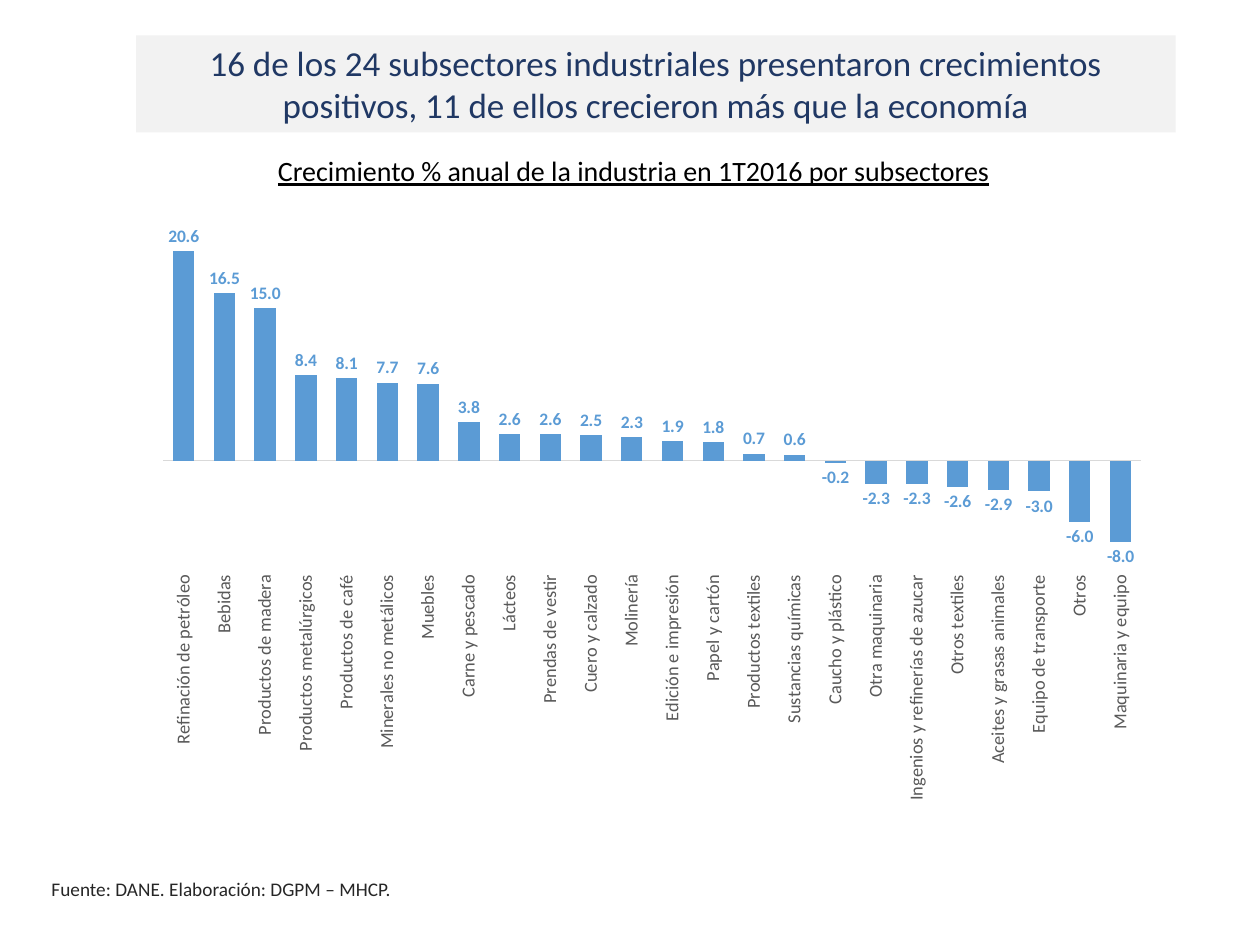
from lxml.etree import SubElement
from pptx import Presentation
from pptx.chart.data import CategoryChartData
from pptx.dml.color import RGBColor
from pptx.enum.chart import XL_CHART_TYPE, XL_LABEL_POSITION, XL_TICK_LABEL_POSITION, XL_TICK_MARK
from pptx.enum.text import MSO_ANCHOR, MSO_AUTO_SIZE, PP_ALIGN
from pptx.oxml.ns import qn
from pptx.util import Inches, Pt

FONT = "Calibri"
COLORS = {
    "banner": "F2F2F2",
    "title": "203864",
    "subtitle": "000000",
    "source": "262626",
    "bar": "5B9BD5",
    "axis_text": "595959",
    "axis_line": "D9D9D9",
}
GROWTH = {
    "Refinación de petróleo": 20.6,
    "Bebidas": 16.5,
    "Productos de madera": 15,
    "Productos metalúrgicos": 8.4,
    "Productos de café": 8.1,
    "Minerales no metálicos": 7.7,
    "Muebles": 7.6,
    "Carne y pescado": 3.8,
    "Lácteos": 2.6,
    "Prendas de vestir": 2.6,
    "Cuero y calzado": 2.5,
    "Molinería": 2.3,
    "Edición e impresión": 1.9,
    "Papel y cartón": 1.8,
    "Productos textiles": 0.7,
    "Sustancias químicas": 0.6,
    "Caucho y plástico": -0.2,
    "Otra maquinaria": -2.3,
    "Ingenios y refinerías de azucar": -2.3,
    "Otros textiles": -2.6,
    "Aceites y grasas animales": -2.9,
    "Equipo de transporte": -3,
    "Otros": -6,
    "Maquinaria y equipo": -8,
}


def color(name):
    return RGBColor.from_string(COLORS[name])


def style_font(font, size, color_name, bold=False):
    font.name = FONT
    font.size = Pt(size)
    font.bold = bold
    font.color.rgb = color(color_name)


def write_text(shape, text, size, color_name, alignment):
    frame = shape.text_frame
    frame.word_wrap = True
    frame.auto_size = MSO_AUTO_SIZE.NONE
    paragraph = frame.paragraphs[0]
    paragraph.alignment = alignment
    run = paragraph.add_run()
    run.text = text
    style_font(run.font, size, color_name)
    return run


def place_title(slide, left, top, width, height):
    title = slide.shapes.title
    title.left, title.top, title.width, title.height = left, top, width, height
    title.fill.solid()
    title.fill.fore_color.rgb = color("banner")
    title.text_frame.vertical_anchor = MSO_ANCHOR.MIDDLE
    write_text(
        title,
        "16 de los 24 subsectores industriales presentaron crecimientos "
        "positivos, 11 de ellos crecieron más que la economía",
        20, "title", PP_ALIGN.CENTER,
    )


def place_subtitle(slide, left, top, width, height):
    box = slide.shapes.add_textbox(left, top, width, height)
    run = write_text(
        box, "Crecimiento % anual de la industria en 1T2016 por subsectores",
        16, "subtitle", PP_ALIGN.CENTER,
    )
    run.font.underline = True


def place_source(slide, left, top, width, height):
    box = slide.shapes.add_textbox(left, top, width, height)
    write_text(box, "Fuente: DANE. Elaboración: DGPM – MHCP.", 11, "source", PP_ALIGN.LEFT)


def set_plot_layout(chart, x, y, w, h):
    plot_area = chart.plots[0]._element.getparent()
    layout = plot_area.find(qn("c:layout"))
    if layout is None:
        layout = SubElement(plot_area, qn("c:layout"))
        plot_area.insert(0, layout)
    manual = SubElement(layout, qn("c:manualLayout"))
    settings = {"layoutTarget": "inner", "xMode": "edge", "yMode": "edge",
                "x": x, "y": y, "w": w, "h": h}
    for tag, value in settings.items():
        SubElement(manual, qn(f"c:{tag}")).set("val", str(value))


def place_growth_chart(slide, left, top, width, height):
    data = CategoryChartData()
    data.categories = list(GROWTH)
    data.add_series("Series 1", list(GROWTH.values()))
    chart = slide.shapes.add_chart(
        XL_CHART_TYPE.COLUMN_CLUSTERED, left, top, width, height, data
    ).chart
    chart.has_legend = False
    chart.has_title = False
    style_font(chart.font, 10, "subtitle")
    set_plot_layout(chart, 0.038, 0, 0.962, 0.536)

    # Columns and their values
    plot = chart.plots[0]
    plot.gap_width = 90
    plot.overlap = -27
    plot.vary_by_categories = False
    series = plot.series[0]
    series.invert_if_negative = False
    series.format.fill.solid()
    series.format.fill.fore_color.rgb = color("bar")
    labels = series.data_labels
    labels.show_value = True
    labels.number_format = "#,##0.0"
    labels.number_format_is_linked = False
    labels.position = XL_LABEL_POSITION.OUTSIDE_END
    style_font(labels.font, 10, "bar", bold=True)

    # Value axis
    value_axis = chart.value_axis
    value_axis.minimum_scale = -10
    value_axis.maximum_scale = 25
    value_axis.has_major_gridlines = False
    value_axis.visible = False

    # Category axis with vertical names
    category_axis = chart.category_axis
    category_axis.tick_label_position = XL_TICK_LABEL_POSITION.LOW
    category_axis.major_tick_mark = XL_TICK_MARK.NONE
    category_axis.minor_tick_mark = XL_TICK_MARK.NONE
    category_axis.format.line.color.rgb = color("axis_line")
    category_axis.format.line.width = Pt(0.75)
    style_font(category_axis.tick_labels.font, 10.5, "axis_text")
    body = category_axis._element.find(qn("c:txPr")).find(qn("a:bodyPr"))
    body.set("rot", "-5400000")
    body.set("vert", "horz")


def main():
    presentation = Presentation()
    presentation.slide_width = Inches(10)
    presentation.slide_height = Inches(7.5)
    slide = presentation.slides.add_slide(presentation.slide_layouts[5])
    place_title(slide, Inches(1.08), Inches(0.28), Inches(8.25), Inches(0.77))
    place_subtitle(slide, Inches(1.24), Inches(1.17), Inches(7.58), Inches(0.37))
    place_growth_chart(slide, Inches(0.99), Inches(1.64), Inches(8.07), Inches(5.27))
    place_source(slide, Inches(0.31), Inches(6.91), Inches(3.11), Inches(0.29))
    presentation.save("out.pptx")


if __name__ == "__main__":
    main()
